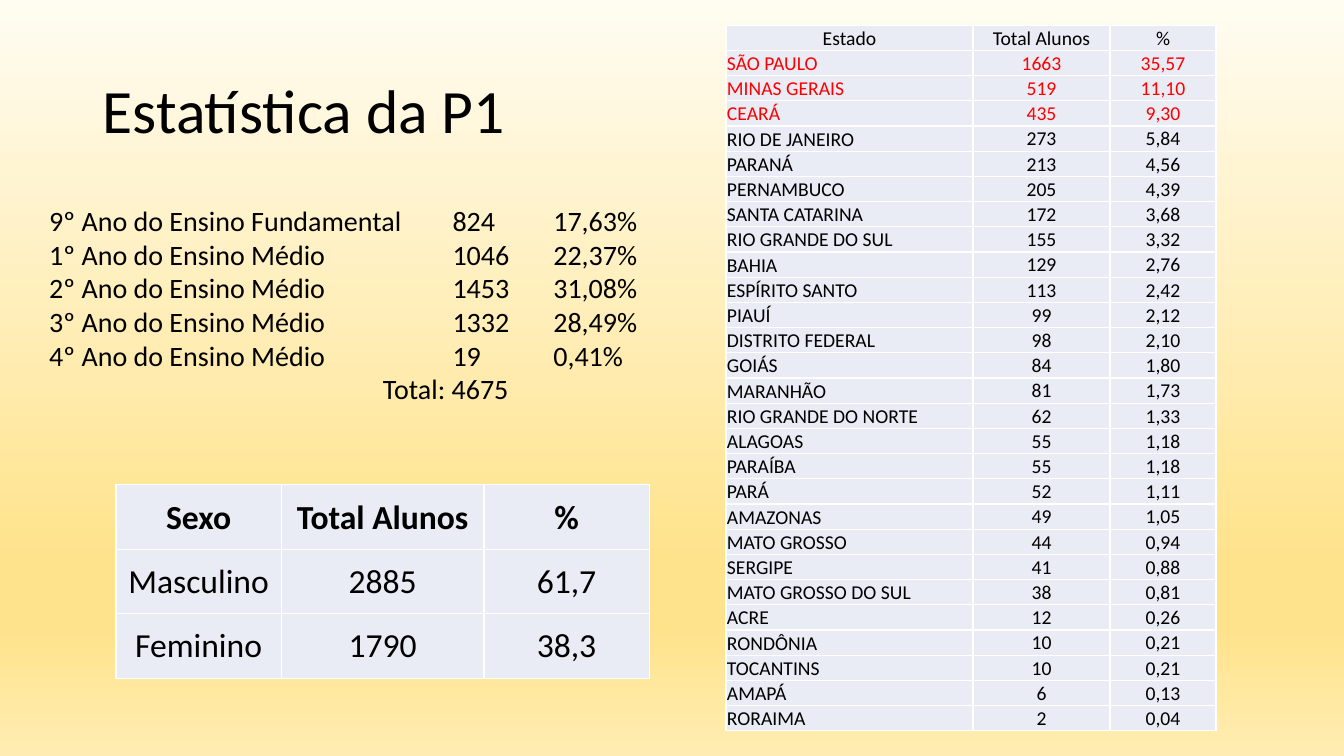
from lxml.etree import SubElement
from pptx import Presentation
from pptx.dml.color import RGBColor
from pptx.enum.text import MSO_ANCHOR as Anchor, PP_ALIGN as Align
from pptx.oxml.ns import qn
from pptx.util import Inches, Pt

FONT = "Calibri"
COLORS = {"text": "000000", "highlight": "FF0000", "cell": "E9EBF5", "border": "FFFFFF"}
BACKGROUND_STOPS = [(0, "FFFCF2"), (74, "FFE38C"), (83, "FFE38C"), (100, "FFECB2")]

GRADES = [
    ("9º Ano do Ensino Fundamental", "824", "17,63%"),
    ("1º Ano do Ensino Médio", "1046", "22,37%"),
    ("2º Ano do Ensino Médio", "1453", "31,08%"),
    ("3º Ano do Ensino Médio", "1332", "28,49%"),
    ("4º Ano do Ensino Médio", "19", "0,41%"),
]
GRADE_TABS = (4, 5)
TOTAL_TABS = (3.31,)

SEXES = [
    ("Sexo", "Total Alunos", "%"),
    ("Masculino", "2885", "61,7"),
    ("Feminino", "1790", "38,3"),
]

STATES = [
    ("Estado", "Total Alunos", "%"),
    ("SÃO PAULO", "1663", "35,57"),
    ("MINAS GERAIS", "519", "11,10"),
    ("CEARÁ", "435", "9,30"),
    ("RIO DE JANEIRO", "273", "5,84"),
    ("PARANÁ", "213", "4,56"),
    ("PERNAMBUCO", "205", "4,39"),
    ("SANTA CATARINA", "172", "3,68"),
    ("RIO GRANDE DO SUL", "155", "3,32"),
    ("BAHIA", "129", "2,76"),
    ("ESPÍRITO SANTO", "113", "2,42"),
    ("PIAUÍ", "99", "2,12"),
    ("DISTRITO FEDERAL", "98", "2,10"),
    ("GOIÁS", "84", "1,80"),
    ("MARANHÃO", "81", "1,73"),
    ("RIO GRANDE DO NORTE", "62", "1,33"),
    ("ALAGOAS", "55", "1,18"),
    ("PARAÍBA", "55", "1,18"),
    ("PARÁ", "52", "1,11"),
    ("AMAZONAS", "49", "1,05"),
    ("MATO GROSSO", "44", "0,94"),
    ("SERGIPE", "41", "0,88"),
    ("MATO GROSSO DO SUL", "38", "0,81"),
    ("ACRE", "12", "0,26"),
    ("RONDÔNIA", "10", "0,21"),
    ("TOCANTINS", "10", "0,21"),
    ("AMAPÁ", "6", "0,13"),
    ("RORAIMA", "2", "0,04"),
]
HIGHLIGHTED_STATES = range(1, 4)


def set_background(slide):
    fill = slide.background.fill
    fill.gradient()
    fill.gradient_angle = 270
    stops = next(slide.element.iter(qn("a:gsLst")))
    for stop in list(stops):
        stops.remove(stop)
    for percent, color in BACKGROUND_STOPS:
        stop = SubElement(stops, qn("a:gs"), pos=str(percent * 1000))
        SubElement(stop, qn("a:srgbClr"), val=color)


def add_run(paragraph, text, size, color="text", bold=False):
    run = paragraph.add_run()
    run.text = text
    font = run.font
    font.name, font.size, font.bold = FONT, Pt(size), bold
    font.color.rgb = RGBColor.from_string(COLORS[color])


def add_textbox(slide, left, top, width, height, anchor):
    shape = slide.shapes.add_textbox(Inches(left), Inches(top), Inches(width), Inches(height))
    shape.text_frame.word_wrap = True
    shape.text_frame.vertical_anchor = anchor
    return shape.text_frame


def set_tabs(paragraph, positions):
    tabs = SubElement(paragraph._p.get_or_add_pPr(), qn("a:tabLst"))
    for position in positions:
        SubElement(tabs, qn("a:tab"), pos=str(Inches(position)), algn="l")


def add_title(slide):
    paragraph = add_textbox(slide, 0.92, 0.4, 11.5, 1.45, Anchor.MIDDLE).paragraphs[0]
    paragraph.line_spacing = 0.9
    add_run(paragraph, "Estatística da P1", 44)


def add_grades(slide):
    frame = add_textbox(slide, 0.39, 1.97, 7.37, 2.12, Anchor.TOP)
    lines = [("\t".join(grade), GRADE_TABS) for grade in GRADES]
    lines.append(("\tTotal: 4675", TOTAL_TABS))
    for index, (text, tabs) in enumerate(lines):
        paragraph = frame.add_paragraph() if index else frame.paragraphs[0]
        set_tabs(paragraph, tabs)
        add_run(paragraph, text, 20)


def style_cell(cell):
    cell.margin_left = cell.margin_top = cell.margin_right = Inches(0.01)
    cell.margin_bottom = 0
    properties = cell._tc.get_or_add_tcPr()
    for side in ("lnL", "lnR", "lnT", "lnB"):
        line = SubElement(properties, qn(f"a:{side}"), w=str(Pt(1)))
        SubElement(SubElement(line, qn("a:solidFill")), qn("a:srgbClr"), val=COLORS["border"])
    cell.fill.solid()
    cell.fill.fore_color.rgb = RGBColor.from_string(COLORS["cell"])


def add_table(slide, rows, left, top, widths, row_height, size,
              bold_header=False, names_left=False, highlighted=()):
    shape = slide.shapes.add_table(
        len(rows), len(widths), Inches(left), Inches(top),
        Inches(sum(widths)), Inches(row_height * len(rows)))
    table = shape.table
    table.first_row = table.horz_banding = False
    for column, width in zip(table.columns, widths):
        column.width = Inches(width)
    for row_index, values in enumerate(rows):
        table.rows[row_index].height = Inches(row_height)
        color = "highlight" if row_index in highlighted else "text"
        for column_index, value in enumerate(values):
            cell = table.cell(row_index, column_index)
            style_cell(cell)
            is_left = names_left and row_index > 0 and column_index == 0
            cell.vertical_anchor = Anchor.BOTTOM if is_left else Anchor.MIDDLE
            paragraph = cell.text_frame.paragraphs[0]
            paragraph.alignment = Align.LEFT if is_left else Align.CENTER
            add_run(paragraph, value, size, color, bold_header and row_index == 0)


def main():
    presentation = Presentation()
    presentation.slide_width = Inches(13.33)
    presentation.slide_height = Inches(7.5)
    slide = presentation.slides.add_slide(presentation.slide_layouts[6])
    set_background(slide)
    add_title(slide)
    add_grades(slide)
    add_table(slide, SEXES, 1.15, 4.81, (1.64, 2.01, 1.64), 0.64, 24, bold_header=True)
    add_table(slide, STATES, 7.2, 0.25, (2.45, 1.36, 1.05), 0.25, 14,
              names_left=True, highlighted=HIGHLIGHTED_STATES)
    presentation.save("out.pptx")


if __name__ == "__main__":
    main()
